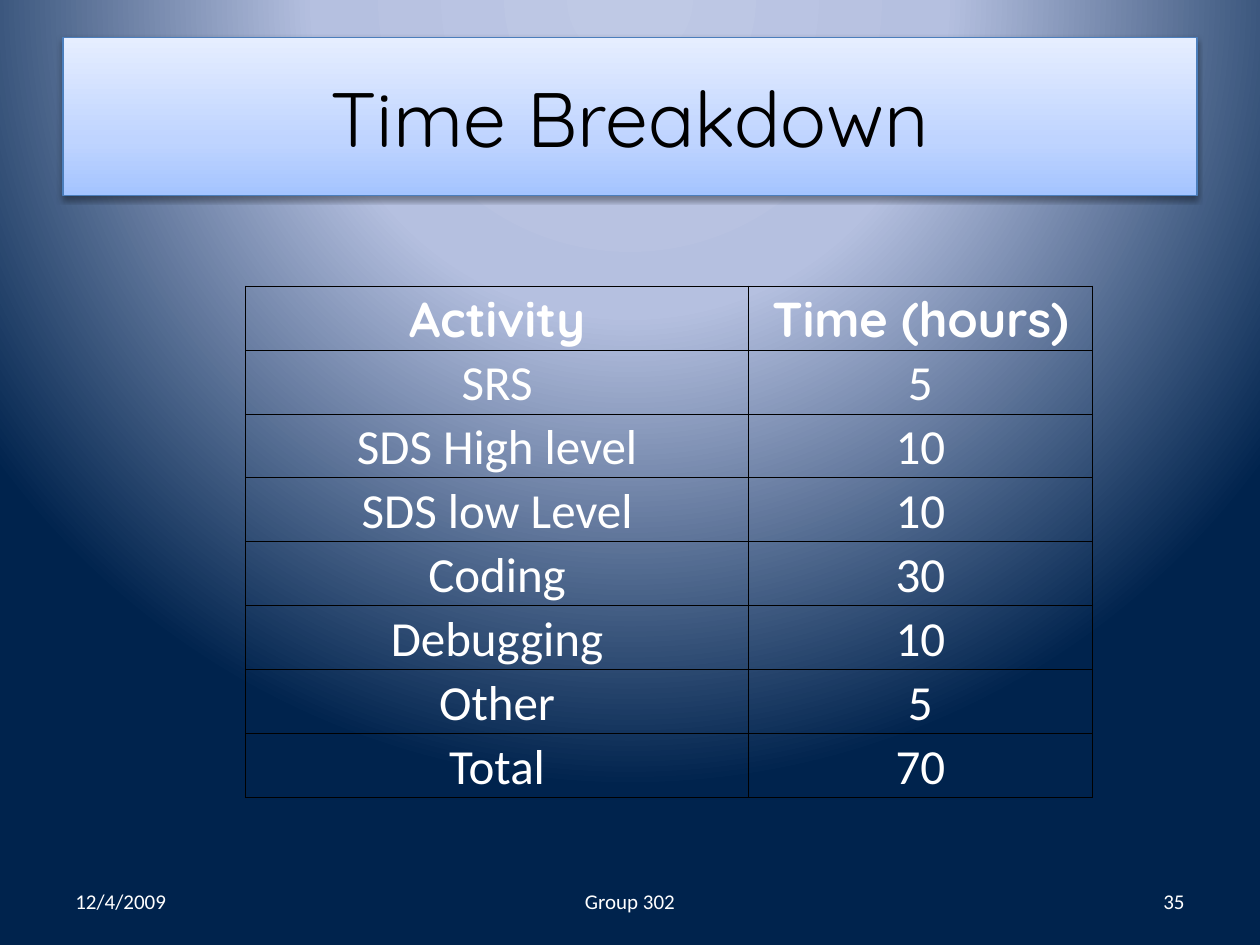
from lxml import etree
from pptx import Presentation
from pptx.dml.color import RGBColor
from pptx.enum.shapes import MSO_SHAPE
from pptx.enum.text import MSO_ANCHOR, PP_ALIGN
from pptx.oxml import parse_xml
from pptx.oxml.ns import nsdecls, qn
from pptx.util import Inches, Pt

COLORS = {
    "text": "FFFFFF", "title": "000000", "border": "000000",
    "title_line": "4B7EBC", "shadow": "000000",
}
BACKGROUND = [(0, "BFC9E5"), (40, "B5C0E0"), (100, "00234D")]
BANNER = [(0, "A4C4FF"), (35, "BFD4FF"), (100, "E6EEFF")]
GLOW = ('<a:path path="circle"><a:fillToRect l="50000" t="-80000" '
        'r="50000" b="180000"/></a:path>')
UPWARD = '<a:lin ang="16200000" scaled="0"/>'
ROWS = [
    ("Activity", "Time (hours)"), ("SRS", "5"), ("SDS High level", "10"),
    ("SDS low Level", "10"), ("Coding", "30"), ("Debugging", "10"),
    ("Other", "5"), ("Total", "70"),
]


def set_gradient(fill, parent, stops, direction):
    """Give a fill the listed gradient stops and direction."""
    fill.gradient()
    old = parent.find(qn("a:gradFill"))
    gs = "".join(f'<a:gs pos="{pos * 1000}"><a:srgbClr val="{color}"/></a:gs>'
                 for pos, color in stops)
    parent.replace(old, parse_xml(
        f'<a:gradFill {nsdecls("a")} rotWithShape="1">'
        f"<a:gsLst>{gs}</a:gsLst>{direction}</a:gradFill>"))


def write(tf, text, size=12, font="Calibri", color="text", bold=False,
          align=PP_ALIGN.CENTER):
    """Write one formatted paragraph into a text frame."""
    tf.word_wrap = True
    p = tf.paragraphs[0]
    p.alignment = align
    r = p.add_run()
    r.text = text
    r.font.size = Pt(size)
    r.font.name = font
    r.font.bold = bold
    r.font.color.rgb = RGBColor.from_string(COLORS[color])


def add_background(s):
    """Fill the slide with a glow from above the top edge."""
    fill = s.background.fill
    fill.solid()
    set_gradient(fill, s._element.find(".//" + qn("p:bgPr")), BACKGROUND, GLOW)


def add_title(s, left, top, width, height, text):
    """Add the title banner with its gradient and soft shadow."""
    sp = s.shapes.add_shape(MSO_SHAPE.RECTANGLE, Inches(left), Inches(top),
                            Inches(width), Inches(height))
    spPr = sp._element.spPr
    set_gradient(sp.fill, spPr, BANNER, UPWARD)
    sp.line.color.rgb = RGBColor.from_string(COLORS["title_line"])
    sp.line.width = Pt(0.75)
    sp.shadow.inherit = False
    spPr.find(qn("a:effectLst")).append(parse_xml(
        f'<a:outerShdw {nsdecls("a")} blurRad="{Pt(3.1)}" dist="{Pt(1.6)}" '
        f'dir="5400000" rotWithShape="0"><a:srgbClr val="{COLORS["shadow"]}">'
        '<a:alpha val="38000"/></a:srgbClr></a:outerShdw>'))
    sp.text_frame.vertical_anchor = MSO_ANCHOR.MIDDLE
    write(sp.text_frame, text, size=44, font="Quicksand", color="title")


def set_borders(cell):
    """Draw a thin line on all four sides of a cell."""
    tcPr = cell._tc.get_or_add_tcPr()
    for i, side in enumerate(("lnL", "lnR", "lnT", "lnB")):
        ln = etree.Element(qn(f"a:{side}"), w=str(Pt(0.5)))
        fill = etree.SubElement(ln, qn("a:solidFill"))
        etree.SubElement(fill, qn("a:srgbClr"), val=COLORS["border"])
        tcPr.insert(i, ln)


def add_time_table(s, left, top, width, height, rows, first_col):
    """Add the table of hours per activity."""
    table = s.shapes.add_table(len(rows), 2, Inches(left), Inches(top),
                               Inches(width), Inches(height)).table
    table.first_row = table.horz_banding = False
    table.columns[0].width = Inches(first_col)
    table.columns[1].width = Inches(width - first_col)
    for i, values in enumerate(rows):
        table.rows[i].height = Inches(height / len(rows))
        header = i == 0
        for j, text in enumerate(values):
            cell = table.cell(i, j)
            cell.margin_left = cell.margin_right = cell.margin_top = Inches(0.01)
            cell.margin_bottom = 0
            cell.vertical_anchor = MSO_ANCHOR.BOTTOM
            cell.fill.background()
            set_borders(cell)
            write(cell.text_frame, text, size=28, bold=header,
                  font="Quicksand" if header else "Calibri")


def add_footer(s, left, top, width, height, date, group, number):
    """Add date, group and slide number along the bottom."""
    side, middle = 2.33, 3.17
    for text, x, w, align in (
            (date, 0, side, PP_ALIGN.LEFT),
            (group, (width - middle) / 2, middle, PP_ALIGN.CENTER),
            (number, width - side, side, PP_ALIGN.RIGHT)):
        tf = s.shapes.add_textbox(Inches(left + x), Inches(top),
                                  Inches(w), Inches(height)).text_frame
        tf.vertical_anchor = MSO_ANCHOR.MIDDLE
        write(tf, text, align=align)


def main():
    """Build the slide and save it."""
    prs = Presentation()
    prs.slide_width, prs.slide_height = Inches(10), Inches(7.5)
    s = prs.slides.add_slide(prs.slide_layouts[6])
    add_background(s)
    add_title(s, 0.5, 0.3, 9, 1.25, "Time Breakdown")
    add_time_table(s, 1.95, 2.27, 6.72, 4.06, ROWS, first_col=3.99)
    add_footer(s, 0.5, 6.95, 9, 0.4, "12/4/2009", "Group 302", "35")
    prs.save("out.pptx")


if __name__ == "__main__":
    main()
